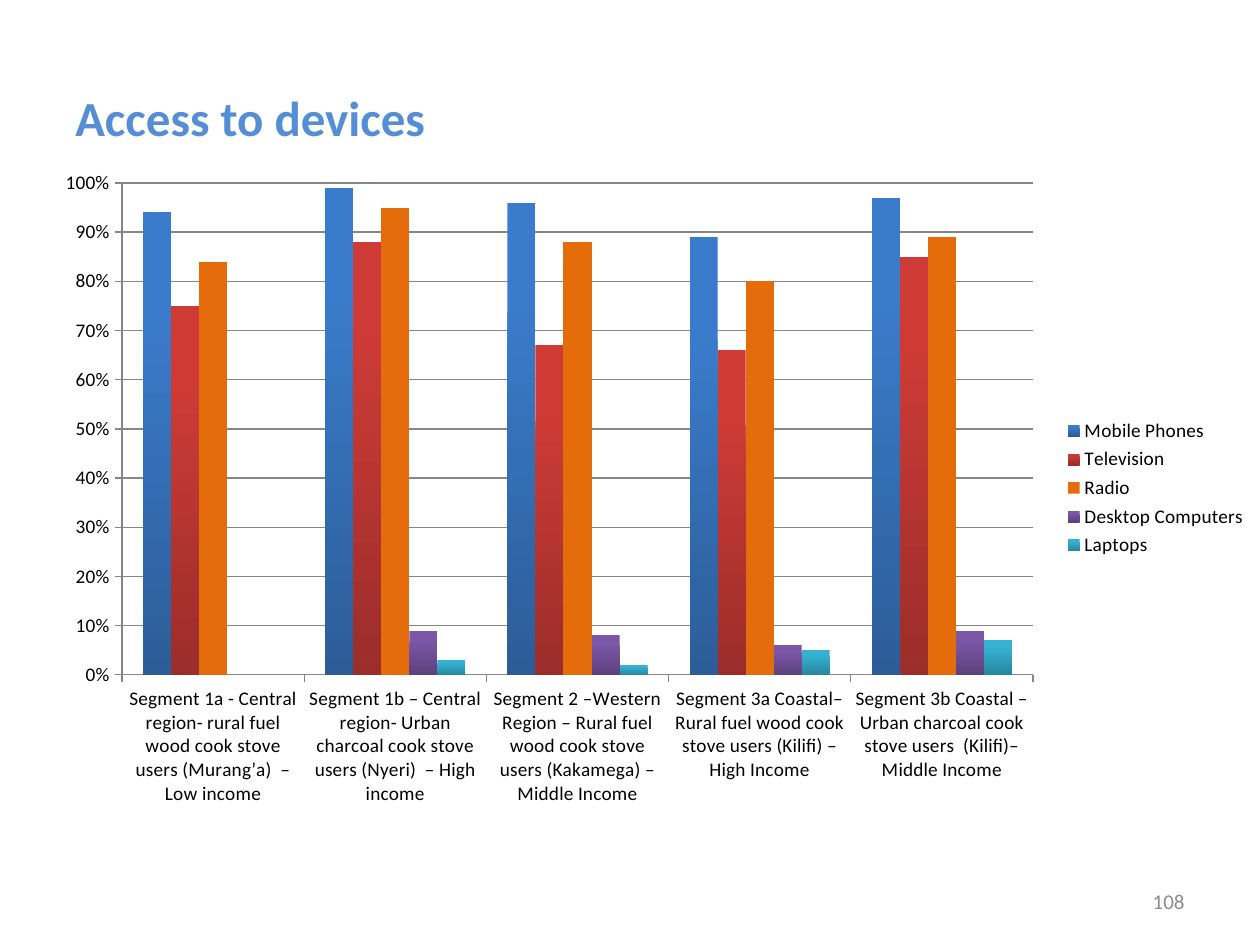
from lxml import etree
from pptx import Presentation
from pptx.chart.data import CategoryChartData
from pptx.dml.color import RGBColor
from pptx.enum.chart import XL_CHART_TYPE, XL_LEGEND_POSITION, XL_TICK_MARK
from pptx.enum.text import MSO_ANCHOR, PP_ALIGN
from pptx.oxml.ns import qn
from pptx.util import Emu, Pt

PX = 914400 / 126
FONT = "Calibri"
COLORS = {"title": "558ED5", "text": "000000", "number": "8C8C8C", "line": "868686"}

CHART_BOX = (42, 157, 1218, 662)
PLOT_BOX = (122, 183, 911, 492)
CATEGORIES = [
    "Segment 1a - Central region- rural fuel wood cook stove users (Murang’a)  – Low income",
    "Segment 1b – Central region- Urban charcoal cook stove users (Nyeri)  – High income",
    "Segment 2 –Western Region – Rural fuel wood cook stove users (Kakamega) – Middle Income",
    "Segment 3a Coastal– Rural fuel wood cook stove users (Kilifi) – High Income",
    "Segment 3b Coastal – Urban charcoal cook stove users  (Kilifi)– Middle Income",
]
# Name, values, colour at the top of the bar, colour at its foot
SERIES = [
    ("Mobile Phones", (0.94, 0.99, 0.96, 0.89, 0.97), "3A7CCB", "2C5D98"),
    ("Television", (0.75, 0.88, 0.67, 0.66, 0.85), "CE3B37", "9B2D2A"),
    ("Radio", (0.84, 0.95, 0.88, 0.8, 0.89), "E46C0A", "E46C0A"),
    ("Desktop Computers", (0, 0.09, 0.08, 0.06, 0.09), "7B57A8", "5D417E"),
    ("Laptops", (0, 0.03, 0.02, 0.05, 0.07), "36B1D2", "2787A0"),
]


def emu(box):
    return [Emu(round(length * PX)) for length in box]


def add_text(slide, box, text, size, color, bold=False, align=PP_ALIGN.LEFT):
    frame = slide.shapes.add_textbox(*emu(box)).text_frame
    frame.word_wrap = True
    frame.vertical_anchor = MSO_ANCHOR.MIDDLE
    paragraph = frame.paragraphs[0]
    paragraph.alignment = align
    run = paragraph.add_run()
    run.text = text
    run.font.name = FONT
    run.font.size = Pt(size)
    run.font.bold = bold
    run.font.color.rgb = RGBColor.from_string(color)


def fill_bars(series, top, foot):
    fill = series.format.fill
    if top == foot:
        fill.solid()
        fill.fore_color.rgb = RGBColor.from_string(top)
        return
    fill.gradient()
    fill.gradient_angle = 270
    for stop, color, position in zip(fill.gradient_stops, (top, foot), (0.2, 1)):
        stop.color.rgb = RGBColor.from_string(color)
        stop.position = position


def place_plot(chart):
    """Fix the area inside the axes, as fractions of the chart."""
    left, top, width, height = CHART_BOX
    x, y, w, h = PLOT_BOX
    plot_area = chart.plots[0]._element.getparent()
    for old in plot_area.findall(qn("c:layout")):
        plot_area.remove(old)
    layout = etree.Element(qn("c:layout"))
    plot_area.insert(0, layout)
    manual = etree.SubElement(layout, qn("c:manualLayout"))
    settings = {
        "layoutTarget": "inner", "xMode": "edge", "yMode": "edge",
        "x": (x - left) / width, "y": (y - top) / height,
        "w": w / width, "h": h / height,
    }
    for name, value in settings.items():
        etree.SubElement(manual, qn("c:" + name)).set("val", str(value))


def add_device_chart(slide):
    data = CategoryChartData(number_format="0%")
    data.categories = CATEGORIES
    for name, values, _, _ in SERIES:
        data.add_series(name, values)
    chart = slide.shapes.add_chart(
        XL_CHART_TYPE.COLUMN_CLUSTERED, *emu(CHART_BOX), data).chart
    chart.has_title = False
    chart.font.name = FONT
    chart.font.size = Pt(11)
    chart.font.color.rgb = RGBColor.from_string(COLORS["text"])
    chart.has_legend = True
    chart.legend.position = XL_LEGEND_POSITION.RIGHT
    chart.legend.include_in_layout = False

    plot = chart.plots[0]
    plot.gap_width = 150
    plot.overlap = 0
    plot.vary_by_categories = False
    for series, (_, _, top, foot) in zip(plot.series, SERIES):
        series.invert_if_negative = False
        fill_bars(series, top, foot)

    value_axis = chart.value_axis
    value_axis.minimum_scale = 0
    value_axis.maximum_scale = 1
    value_axis.major_unit = 0.1
    value_axis.has_major_gridlines = True
    value_axis.tick_labels.number_format = "0%"
    value_axis.tick_labels.number_format_is_linked = False
    for axis in (chart.category_axis, value_axis):
        axis.major_tick_mark = XL_TICK_MARK.OUTSIDE
    for part in (chart.category_axis, value_axis, value_axis.major_gridlines):
        part.format.line.color.rgb = RGBColor.from_string(COLORS["line"])
        part.format.line.width = Pt(0.75)
    place_plot(chart)


def main():
    presentation = Presentation()
    presentation.slide_width, presentation.slide_height = emu((1260, 945))
    slide = presentation.slides.add_slide(presentation.slide_layouts[6])
    add_text(slide, (63, 38, 1134, 157), "Access to devices", 28, COLORS["title"], bold=True)
    add_device_chart(slide)
    add_text(slide, (903, 876, 294, 50), "108", 12, COLORS["number"], align=PP_ALIGN.RIGHT)
    presentation.save("out.pptx")


if __name__ == "__main__":
    main()
